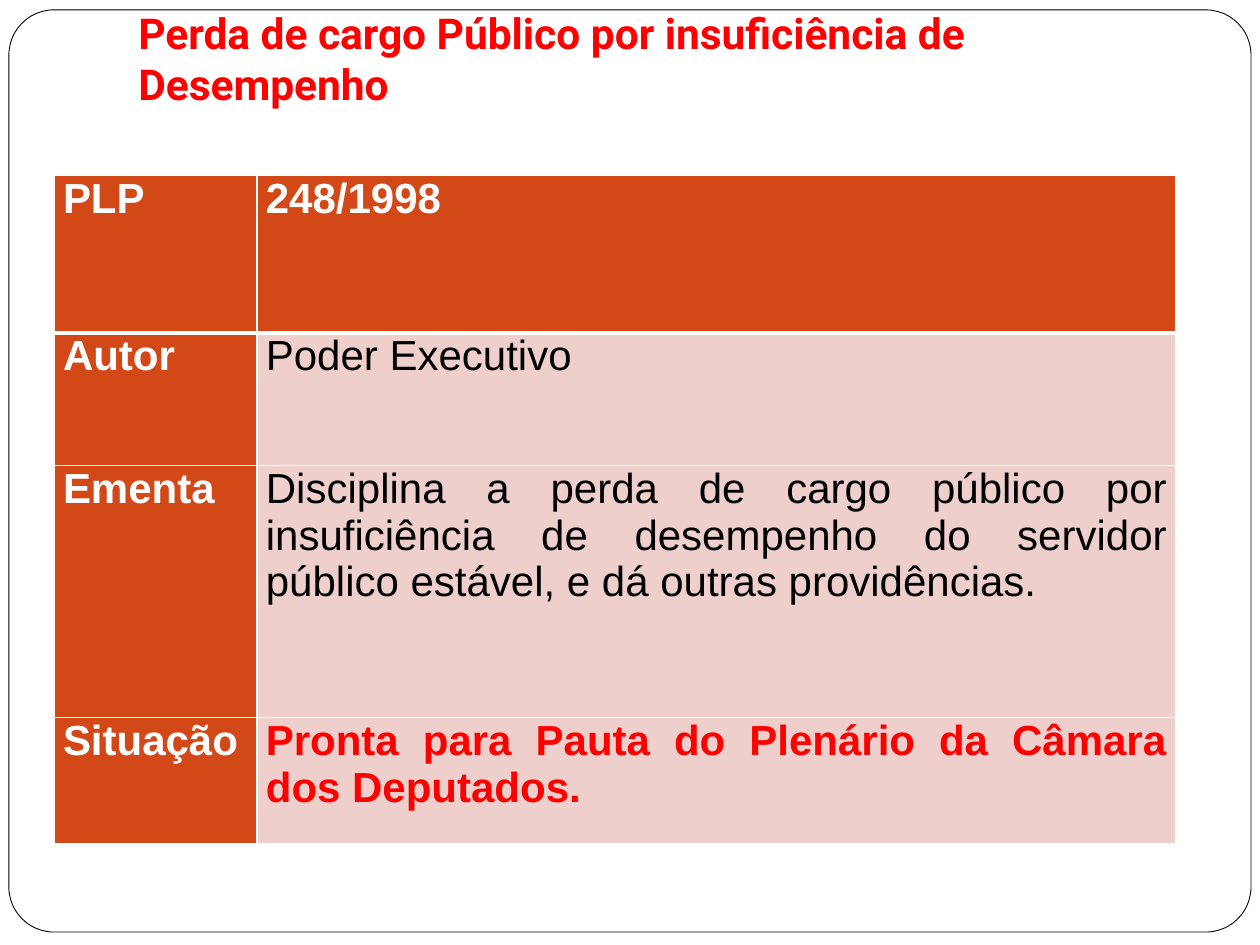
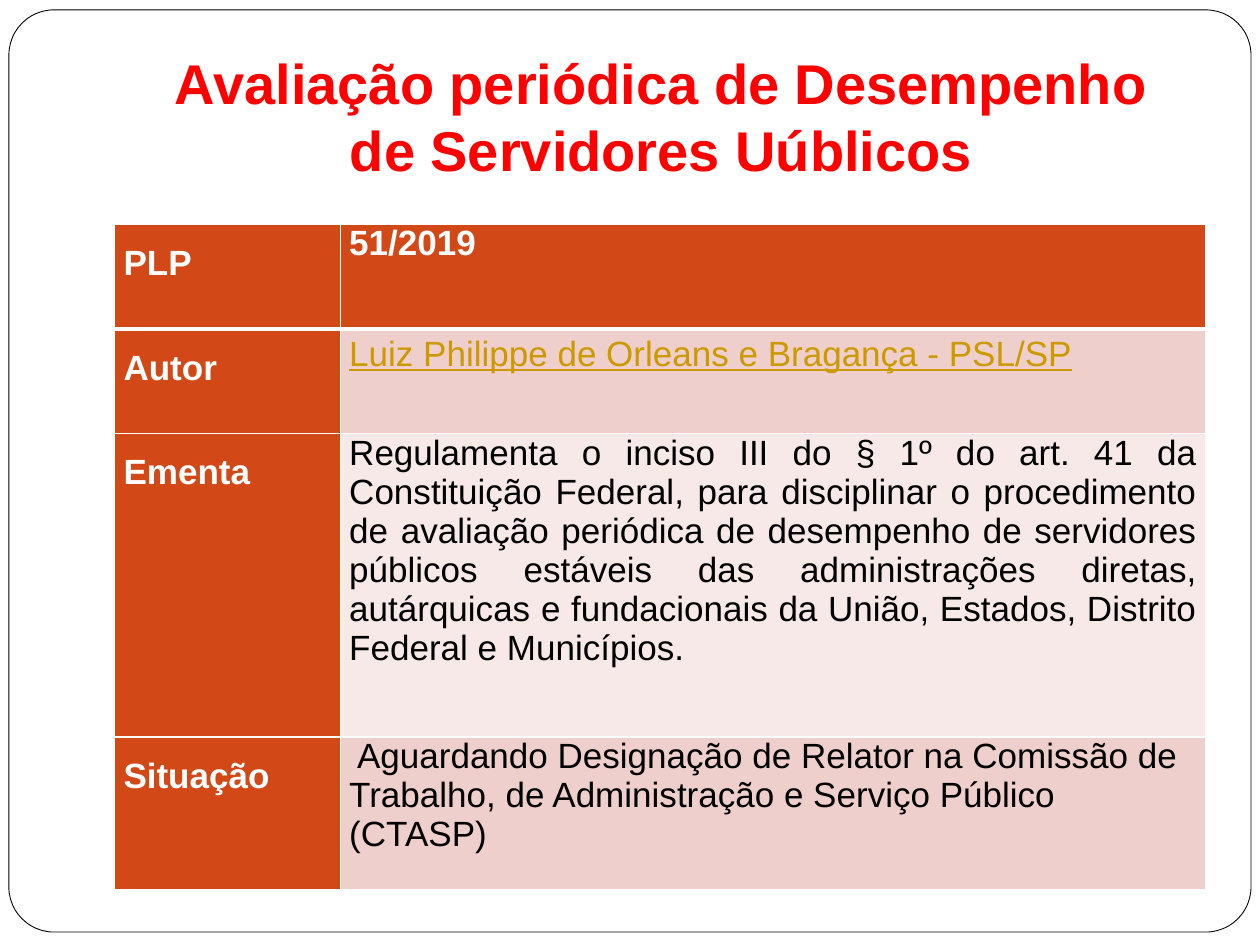
"""Build two slides on bills about public servants' performance."""
from lxml import etree
from pptx import Presentation
from pptx.dml.color import RGBColor
from pptx.enum.shapes import MSO_SHAPE
from pptx.enum.text import MSO_ANCHOR, MSO_AUTO_SIZE, PP_ALIGN
from pptx.oxml.ns import qn
from pptx.util import Cm, Pt

ROUNDED = MSO_SHAPE.ROUNDED_RECTANGLE
BOTTOM, TOP = MSO_ANCHOR.BOTTOM, MSO_ANCHOR.TOP
NO_FIT = MSO_AUTO_SIZE.NONE
LEFT, CENTER, JUSTIFY = PP_ALIGN.LEFT, PP_ALIGN.CENTER, PP_ALIGN.JUSTIFY

COLORS = {
    "white": "FFFFFF", "black": "000000", "red": "FF0000", "gold": "CC9900",
    "orange": "D34817", "pink": "EFCFCC", "pale": "F7E9E8",
}
HEADING = {"bold": True, "color": "white"}
PLAIN = {"bold": False, "color": "black"}
ALERT = {"bold": True, "color": "red"}
LINKED = {"bold": False, "color": "gold", "underline": True}

SLIDES = [
    {
        "title": "Perda de cargo Público por insuficiência de Desempenho",
        "title_font": {"name": "Roboto", "size": Pt(24.3), **ALERT},
        "title_align": LEFT,
        "title_bottom": Cm(1.75),
        "corner": (Cm(1.09), Cm(3.53)),
        "widths": (4.09, 18.52),
        "heights": (3.18, 2.67, 5.08, 2.54),
        "size": Pt(24),
        "label_format": {"alignment": JUSTIFY},
        "rows": [
            ("PLP", "248/1998", "orange", HEADING, {"alignment": JUSTIFY}),
            ("Autor", "Poder Executivo", "pink", PLAIN, {"alignment": JUSTIFY}),
            ("Ementa", "Disciplina a perda de cargo público por insuficiência de "
             "desempenho do servidor público estável, e dá outras providências.",
             "pink", PLAIN, {"alignment": JUSTIFY}),
            ("Situação", "Pronta para Pauta do Plenário da Câmara dos Deputados.",
             "pink", ALERT, {"alignment": JUSTIFY, "space_after": Pt(6)}),
        ],
    },
    {
        "title": "Avaliação periódica de Desempenho de Servidores Uúblicos",
        "title_font": {"name": "Arial", "size": Pt(32), **ALERT},
        "title_align": CENTER,
        "title_bottom": Cm(0.25),
        "corner": (Cm(2.31), Cm(4.52)),
        "widths": (4.55, 17.45),
        "heights": (2.11, 2.11, 6.12, 3.07),
        "size": Pt(20),
        "label_format": {"line_spacing": 1.5},
        "rows": [
            ("PLP", "51/2019", "orange", HEADING, {}),
            ("Autor", "Luiz Philippe de Orleans e Bragança - PSL/SP", "pink",
             LINKED, {"line_spacing": 1.15, "space_after": Pt(10)}),
            ("Ementa", "Regulamenta o inciso III do § 1º do art. 41 da Constituição "
             "Federal, para disciplinar o procedimento de avaliação periódica de "
             "desempenho de servidores públicos estáveis das administrações diretas, "
             "autárquicas e fundacionais da União, Estados, Distrito Federal e "
             "Municípios.", "pale", PLAIN, {"alignment": JUSTIFY}),
            ("Situação", " Aguardando Designação de Relator na Comissão de Trabalho, "
             "de Administração e Serviço Público (CTASP)", "pink", PLAIN, {}),
        ],
    },
]


def write(para, text, font_format, para_format):
    span = para.add_run()
    span.text = text
    for key, value in para_format.items():
        setattr(para, key, value)
    for key, value in font_format.items():
        if key == "color":
            span.font.color.rgb = RGBColor.from_string(COLORS[value])
        else:
            setattr(span.font, key, value)


def add_border(cell, side, points):
    border = etree.SubElement(cell._tc.get_or_add_tcPr(), qn(f"a:ln{side}"),
                              w=str(Pt(points)))
    fill = etree.SubElement(border, qn("a:solidFill"))
    etree.SubElement(fill, qn("a:srgbClr"), val=COLORS["white"])


deck = Presentation()
deck.slide_width, deck.slide_height = Cm(25.4), Cm(19.05)
layout = deck.slide_layouts[5]
pages = [deck.slides.add_slide(layout) for _ in SLIDES]

frame = pages[0].shapes.add_shape(ROUNDED, Cm(0.18), Cm(0.2), Cm(25.04), Cm(18.59))
frame.adjustments[0] = 0.049
frame.shadow.inherit = False
frame.fill.solid()
frame.fill.fore_color.rgb = RGBColor.from_string(COLORS["white"])
frame.line.color.rgb = RGBColor.from_string(COLORS["black"])
frame.line.width = Pt(0.5)
layout.shapes.element.insert(2, frame.element)

for page, content in zip(pages, SLIDES):
    title = page.shapes.title
    title_box = {"left": Cm(2.54), "top": Cm(0.76), "width": Cm(21.59), "height": Cm(3.18)}
    for key, value in title_box.items():
        setattr(title, key, value)
    text_format = {
        "auto_size": NO_FIT, "word_wrap": True, "vertical_anchor": BOTTOM,
        "margin_left": Cm(0.25), "margin_right": Cm(0.25),
        "margin_top": Cm(0.13), "margin_bottom": content["title_bottom"],
    }
    for key, value in text_format.items():
        setattr(title.text_frame, key, value)
    write(title.text_frame.paragraphs[0], content["title"], content["title_font"],
          {"alignment": content["title_align"]})

    widths, heights = content["widths"], content["heights"]
    table = page.shapes.add_table(len(heights), len(widths), *content["corner"],
                                  Cm(sum(widths)), Cm(sum(heights))).table
    for column, width in zip(table.columns, widths):
        column.width = Cm(width)
    for index, (label, text, fill, font, para_format) in enumerate(content["rows"]):
        table.rows[index].height = Cm(heights[index])
        entries = [(label, "orange", HEADING, content["label_format"]),
                   (text, fill, font, para_format)]
        borders = {"L": 1, "R": 1, "T": 3 if index == 1 else 1, "B": 3 if index == 0 else 1}
        for cell, (words, shade, style, layout_format) in zip(table.rows[index].cells, entries):
            cell_format = {"margin_left": Cm(0.18), "margin_right": Cm(0.18),
                           "margin_top": 0, "margin_bottom": 0, "vertical_anchor": TOP}
            for key, value in cell_format.items():
                setattr(cell, key, value)
            for side, points in borders.items():
                add_border(cell, side, points)
            cell.fill.solid()
            cell.fill.fore_color.rgb = RGBColor.from_string(COLORS[shade])
            write(cell.text_frame.paragraphs[0], words,
                  {"name": "Arial", "size": content["size"], **style}, layout_format)

deck.save("out.pptx")
